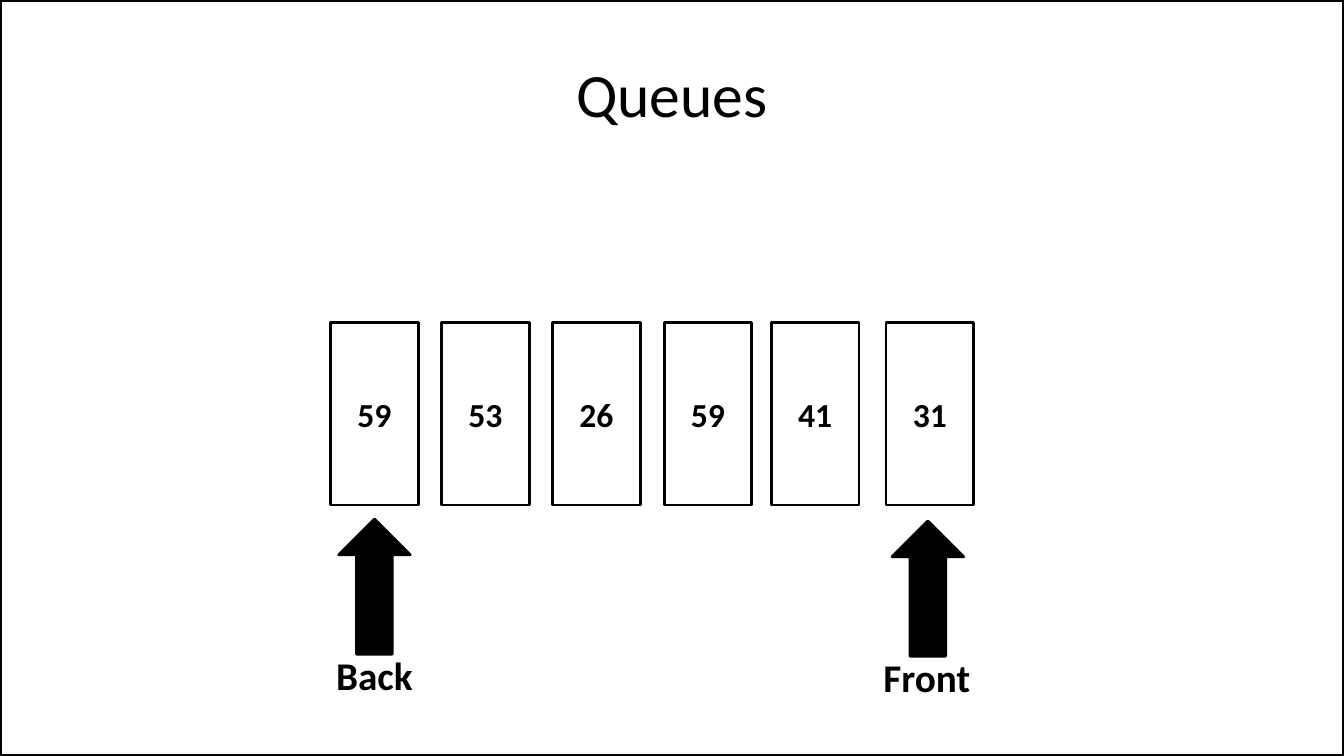
from dataclasses import dataclass

from pptx import Presentation
from pptx.dml.color import RGBColor
from pptx.enum import shapes, text
from pptx.util import Pt

COLORS = {"ink": "000000", "paper": "FFFFFF"}
FONT = "Calibri"
PAGE_WIDTH, PAGE_HEIGHT = 960, 540
CELL_TOP, CELL_WIDTH, CELL_HEIGHT = 230.4, 62.7, 130.3
ARROW_WIDTH, ARROW_HEIGHT = 51.1, 96.5
LABEL_DROP, LABEL_HEIGHT = 90.7, 41


@dataclass(frozen=True)
class Cell:
    value: str
    left: float


@dataclass(frozen=True)
class Pointer:
    label: str
    left: float
    top: float
    label_left: float
    label_width: float


CELLS = [
    Cell("59", 236.1),
    Cell("53", 315.4),
    Cell("26", 394.7),
    Cell("59", 474.4),
    Cell("41", 550.9),
    Cell("31", 632.9),
]
POINTERS = [
    Pointer("Back", 241.9, 370.8, 232.6, 69.8),
    Pointer("Front", 637.2, 372.2, 623.5, 77),
]


def color(name: str) -> RGBColor:
    return RGBColor.from_string(COLORS[name])


def write(box, words: str, size: float, bold: bool = False) -> None:
    box.text_frame.text = words
    para = box.text_frame.paragraphs[0]
    para.alignment = text.PP_ALIGN.CENTER
    para.font.name = FONT
    para.font.size = Pt(size)
    para.font.bold = bold
    para.font.color.rgb = color("ink")


def place(box, left: float, top: float, width: float, height: float) -> None:
    box.left, box.top = Pt(left), Pt(top)
    box.width, box.height = Pt(width), Pt(height)


def add_outline(page, kind, left: float, top: float, width: float,
                height: float, weight: float = 2, filled: bool = False):
    box = page.shapes.add_shape(kind, Pt(left), Pt(top), Pt(width), Pt(height))
    box.shadow.inherit = False
    if filled:
        box.fill.solid()
        box.fill.fore_color.rgb = color("ink")
    else:
        box.fill.background()
    box.line.color.rgb = color("ink")
    box.line.width = Pt(weight)
    return box


def add_cell(page, cell: Cell) -> None:
    box = add_outline(page, shapes.MSO_SHAPE.RECTANGLE, cell.left, CELL_TOP,
                      CELL_WIDTH, CELL_HEIGHT)
    box.text_frame.vertical_anchor = text.MSO_ANCHOR.MIDDLE
    write(box, cell.value, 24, bold=True)


def add_pointer(page, pointer: Pointer) -> None:
    add_outline(page, shapes.MSO_SHAPE.UP_ARROW, pointer.left, pointer.top,
                ARROW_WIDTH, ARROW_HEIGHT, filled=True)
    label = page.shapes.add_textbox(
        Pt(pointer.label_left), Pt(pointer.top + LABEL_DROP),
        Pt(pointer.label_width), Pt(LABEL_HEIGHT))
    label.text_frame.word_wrap = False
    label.text_frame.auto_size = text.MSO_AUTO_SIZE.SHAPE_TO_FIT_TEXT
    write(label, pointer.label, 28, bold=True)


def main() -> None:
    deck = Presentation()
    deck.slide_width, deck.slide_height = Pt(PAGE_WIDTH), Pt(PAGE_HEIGHT)
    page = deck.slides.add_slide(deck.slide_layouts[5])
    page.background.fill.solid()
    page.background.fill.fore_color.rgb = color("paper")

    add_outline(page, shapes.MSO_SHAPE.RECTANGLE, 0, 0, PAGE_WIDTH,
                PAGE_HEIGHT, weight=3)
    title = page.shapes.title
    place(title, 48, 21.6, 864, 90)
    title.text_frame.vertical_anchor = text.MSO_ANCHOR.MIDDLE
    write(title, "Queues", 44)

    for cell in CELLS:
        add_cell(page, cell)
    for pointer in POINTERS:
        add_pointer(page, pointer)
    deck.save("out.pptx")


if __name__ == "__main__":
    main()
